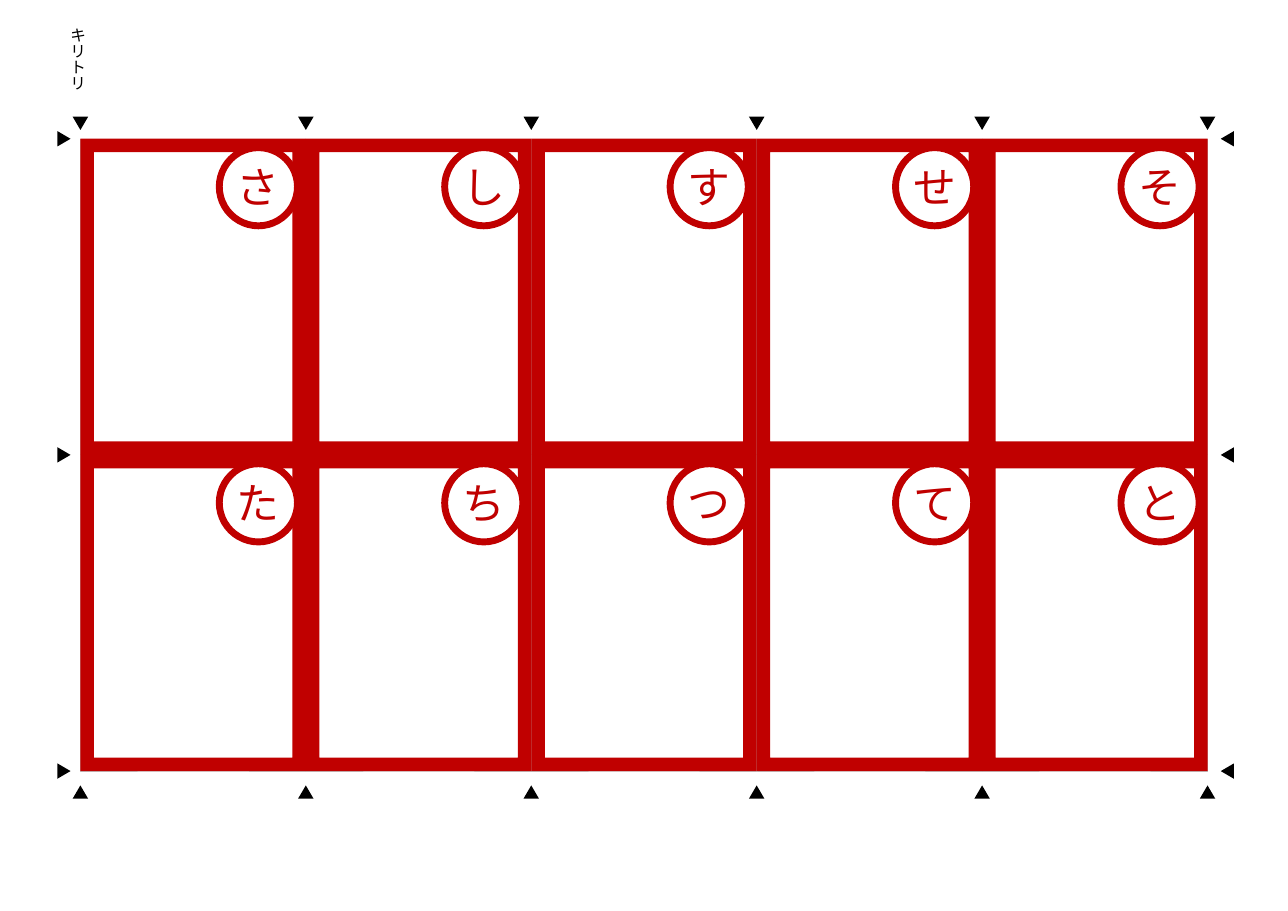
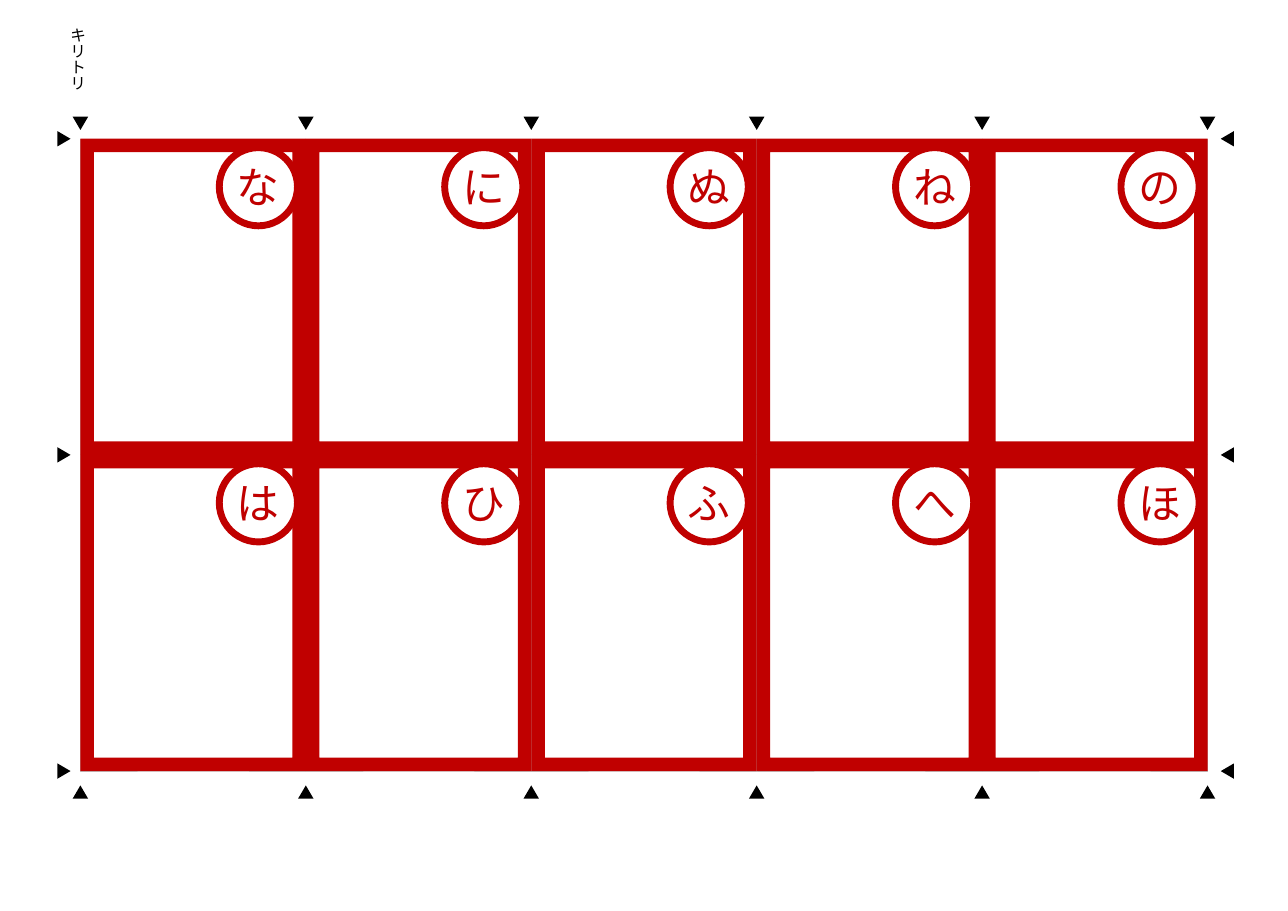
from dataclasses import dataclass
from itertools import product

from lxml.etree import SubElement
from pptx import Presentation
from pptx.dml.color import RGBColor as Color
from pptx.enum.shapes import MSO_SHAPE as Preset
from pptx.enum.text import MSO_ANCHOR as Anchor, MSO_AUTO_SIZE as AutoSize, PP_ALIGN as Align
from pptx.oxml.ns import qn
from pptx.util import Inches, Pt


@dataclass(frozen=True)
class Theme:
    font: str = "Noto Sans CJK JP"
    red: Color = Color.from_string("C00000")
    white: Color = Color.from_string("FFFFFF")
    black: Color = Color.from_string("000000")
    gray: Color = Color.from_string("BFBFBF")
    kana_size: float = 28
    label_size: float = 10.5
    ring_width: float = 4.5
    cut_width: float = 0.25


theme = Theme()

PAGE_WIDTH, PAGE_HEIGHT = 11.69, 8.27
COLUMNS, ROWS = 5, 2
GRID_LEFT, GRID_TOP = 0.73, 1.26
CARD_WIDTH = (PAGE_WIDTH - 2 * GRID_LEFT) / COLUMNS
CARD_HEIGHT = 2.87
FRAME_RATIO = 0.06
BADGE_SIZE, BADGE_X, BADGE_Y = 0.71, 1.26, 0.08
MARKER_WIDTH, MARKER_HEIGHT = 0.14, 0.12
MARKER_TOP, MARKER_BOTTOM = 1.12, 7.19
MARKER_LEFT, MARKER_RIGHT = 0.58, 11.14
CARD_SETS = ["さしすせそたちつてと", "なにぬねのはひふへほ"]

column_edges = [GRID_LEFT + column * CARD_WIDTH for column in range(COLUMNS + 1)]
row_edges = [GRID_TOP + row * CARD_HEIGHT for row in range(ROWS + 1)]
card_corners = [(left, top) for top, left in product(row_edges[:-1], column_edges[:-1])]


def add_preset(shapes, preset, left, top, width, height, fill=None, line=None, line_width=0):
    """Add a shadowless shape; a missing fill or line colour means none."""
    shape = shapes.add_shape(preset, Inches(left), Inches(top), Inches(width), Inches(height))
    shape.shadow.inherit = False
    if fill is None:
        shape.fill.background()
    else:
        shape.fill.solid()
        shape.fill.fore_color.rgb = fill
    if line is None:
        shape.line.fill.background()
    else:
        shape.line.color.rgb = line
        shape.line.width = Pt(line_width)
    return shape


def set_text(shape, text, size, color, align):
    frame = shape.text_frame
    frame.text = text
    frame.vertical_anchor = Anchor.MIDDLE
    frame.margin_left = frame.margin_right = frame.margin_top = frame.margin_bottom = 0
    para = frame.paragraphs[0]
    para.alignment = align
    font = para.runs[0].font
    font.name, font.size, font.color.rgb = theme.font, Pt(size), color
    SubElement(para.runs[0].font._element, qn("a:ea"), typeface=theme.font)


deck = Presentation()
deck.slide_width, deck.slide_height = Inches(PAGE_WIDTH), Inches(PAGE_HEIGHT)
layout = deck.slide_layouts.get_by_name("Blank")
for placeholder in list(layout.placeholders):
    layout.shapes.element.remove(placeholder.element)
pages = [deck.slides.add_slide(layout) for _ in CARD_SETS]

# The cutting guides are assembled on a page, then moved to the shared layout.
guides = pages[0].shapes
markers = [(x, MARKER_TOP, 180) for x in column_edges]
markers += [(x, MARKER_BOTTOM, 0) for x in column_edges]
markers += [(MARKER_LEFT, y, 90) for y in row_edges]
markers += [(MARKER_RIGHT, y, 270) for y in row_edges]
for center_x, center_y, rotation in markers:
    marker = add_preset(guides, Preset.ISOSCELES_TRIANGLE, center_x - MARKER_WIDTH / 2,
                        center_y - MARKER_HEIGHT / 2, MARKER_WIDTH, MARKER_HEIGHT, theme.black)
    marker.rotation = rotation

cut_label = guides.add_textbox(Inches(0.6), Inches(0.25), Inches(0.21), Inches(0.73))
set_text(cut_label, "キリトリ", theme.label_size, theme.black, Align.RIGHT)
cut_label.text_frame.word_wrap = False
cut_label.text_frame.auto_size = AutoSize.SHAPE_TO_FIT_TEXT
cut_label.element.find(".//" + qn("a:bodyPr")).set("vert", "eaVert")

cut_grid = guides.add_group_shape()
for left, top in card_corners:
    add_preset(cut_grid.shapes, Preset.RECTANGLE, left, top, CARD_WIDTH, CARD_HEIGHT,
               line=theme.gray, line_width=theme.cut_width)

for guide in list(guides):
    layout.shapes.element.append(guide.element)

for page, kana_set in zip(pages, CARD_SETS):
    for left, top in card_corners:
        border = add_preset(page.shapes, Preset.FRAME, left, top, CARD_WIDTH, CARD_HEIGHT, theme.red)
        border.adjustments[0] = FRAME_RATIO
    for (left, top), kana in zip(card_corners, kana_set):
        badge = add_preset(page.shapes, Preset.OVAL, left + BADGE_X, top + BADGE_Y, BADGE_SIZE,
                           BADGE_SIZE, theme.white, theme.red, theme.ring_width)
        set_text(badge, kana, theme.kana_size, theme.red, Align.CENTER)

deck.save("out.pptx")
